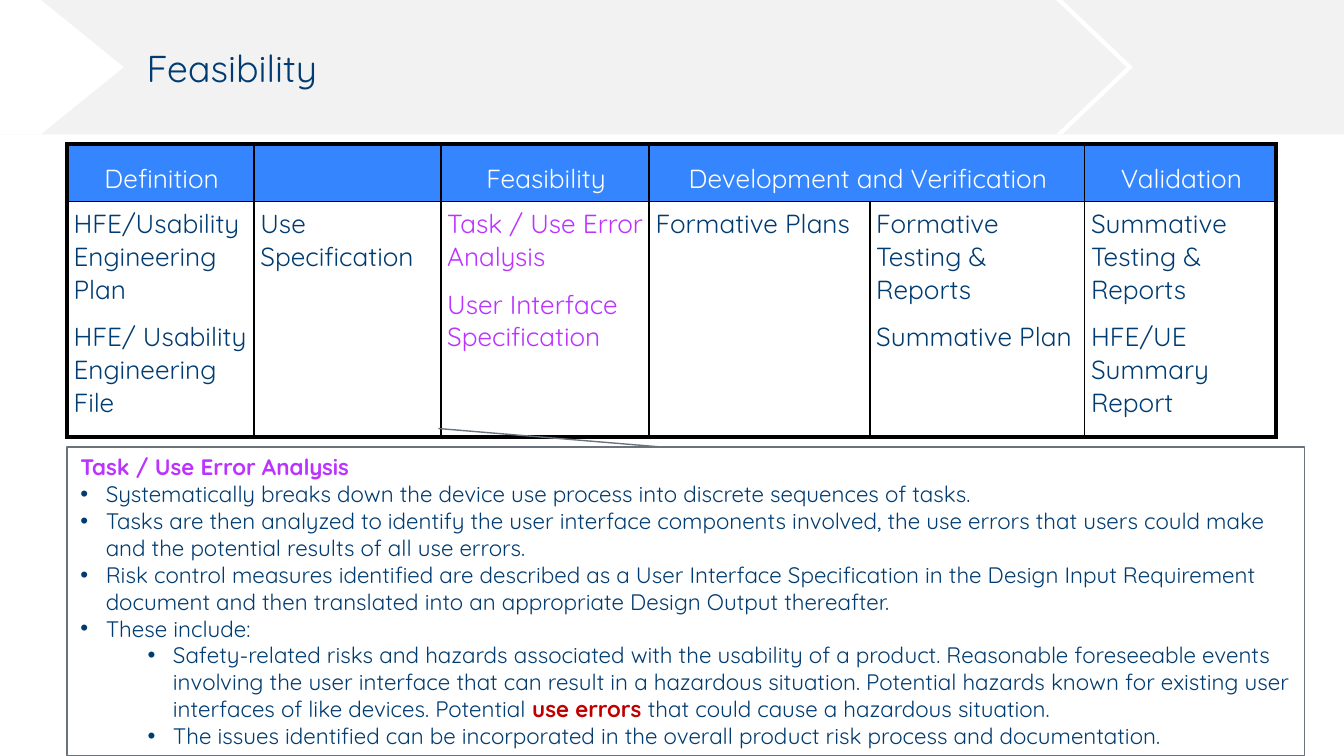
from lxml.etree import SubElement
from pptx import Presentation
from pptx.dml.color import RGBColor
from pptx.enum.shapes import MSO_SHAPE as Preset
from pptx.enum.text import MSO_ANCHOR as Anchor, PP_ALIGN as Align
from pptx.oxml import parse_xml
from pptx.oxml.ns import nsdecls, qn
from pptx.util import Cm, Pt

COLORS = {
    "navy": "003C71",
    "blue": "3485FE",
    "purple": "BB33FF",
    "red": "C00000",
    "band": "F2F2F2",
    "white": "FFFFFF",
    "black": "000000",
    "gray": "6A737B",
}
FONT = "Quicksand"

HEADERS = ["Definition", "", "Feasibility", "Development and Verification", "", "Validation"]
DELIVERABLES = [
    ["HFE/Usability Engineering Plan", "HFE/ Usability Engineering File"],
    ["Use Specification"],
    ["Task / Use Error Analysis", "User Interface Specification"],
    ["Formative Plans"],
    ["Formative Testing & Reports", "Summative Plan"],
    ["Summative Testing & Reports", "HFE/UE Summary Report"],
]
COLUMN_WIDTHS = [3.53, 3.53, 3.94, 4.17, 4.06, 3.62]
ROW_HEIGHTS = [0.76, 4.45]
FEASIBILITY_COLUMN = 2

BULLETS = [
    (0.48, ["Systematically breaks down the device use process into discrete sequences of tasks."]),
    (0.48, ["Tasks are then analyzed to identify the user interface components involved, the use "
            "errors that users could make and the potential results of all use errors."]),
    (0.48, ["Risk control measures identified are described as a User Interface Specification in "
            "the Design Input Requirement document and then translated into an appropriate "
            "Design Output thereafter."]),
    (0.48, ["These include:"]),
    (1.75, ["Safety-related risks and hazards associated with the usability of a product. "
            "Reasonable foreseeable events involving the user interface that can result in a "
            "hazardous situation. Potential hazards known for existing user interfaces of like "
            "devices. Potential ",
            "use errors ",
            "that could cause a hazardous situation."]),
    (1.75, ["The issues identified can be incorporated in the overall product risk process and "
            "documentation."]),
]


def rgb(name):
    return RGBColor.from_string(COLORS[name])


def add_text(para, text, size=14, color="navy", bold=False):
    span = para.add_run()
    span.text = text
    span.font.name = FONT
    span.font.size = Pt(size)
    span.font.bold = bold
    span.font.color.rgb = rgb(color)


class SlideBuilder:
    def __init__(self, page):
        self.page = page

    def shape(self, preset, place, fill, adjustments=(), line=None):
        shape = self.page.shapes.add_shape(preset, *map(Cm, place))
        shape.shadow.inherit = False
        shape.fill.solid()
        shape.fill.fore_color.rgb = rgb(fill)
        if line:
            shape.line.color.rgb = rgb(line)
            shape.line.width = Pt(0.75)
        else:
            shape.line.fill.background()
        for index, value in enumerate(adjustments):
            shape.adjustments[index] = value
        return shape

    def title(self, place, text):
        box = self.page.shapes.add_textbox(*map(Cm, place))
        frame = box.text_frame
        frame.word_wrap = True
        frame.vertical_anchor = Anchor.MIDDLE
        para = frame.paragraphs[0]
        para.line_spacing = 0.9
        add_text(para, text, size=20)

    def borders(self, cell, widths):
        properties = cell._tc.get_or_add_tcPr()
        for index, (side, width) in enumerate(zip("LRTB", widths)):
            properties.insert(index, parse_xml(
                f'<a:ln{side} {nsdecls("a")} w="{Pt(width)}"><a:solidFill>'
                f'<a:srgbClr val="{COLORS["black"]}"/></a:solidFill></a:ln{side}>'))

    def cell(self, cell, texts, fill, color, header):
        cell.fill.solid()
        cell.fill.fore_color.rgb = rgb(fill)
        cell.margin_left = cell.margin_top = cell.margin_bottom = Cm(0.12)
        cell.margin_right = Cm(0.08)
        for index, text in enumerate(filter(None, texts)):
            frame = cell.text_frame
            para = frame.add_paragraph() if index else frame.paragraphs[0]
            if header:
                para.alignment = Align.CENTER
                para.line_spacing = Pt(24)
            if index:
                para.space_before = Pt(8)
            add_text(para, text, color=color)

    def table(self, left, top):
        rows, columns = len(ROW_HEIGHTS), len(COLUMN_WIDTHS)
        table = self.page.shapes.add_table(
            rows, columns, Cm(left), Cm(top),
            Cm(sum(COLUMN_WIDTHS)), Cm(sum(ROW_HEIGHTS))).table
        table.first_row = table.horz_banding = False
        for row, height in zip(table.rows, ROW_HEIGHTS):
            row.height = Cm(height)
        for column, width in enumerate(COLUMN_WIDTHS):
            table.columns[column].width = Cm(width)
            body_color = "purple" if column == FEASIBILITY_COLUMN else "navy"
            self.cell(table.cell(0, column), [HEADERS[column]], "blue", "white", True)
            self.cell(table.cell(1, column), DELIVERABLES[column], "white", body_color, False)
            for row in range(rows):
                outer = (column == 0, column == columns - 1, row == 0, row == rows - 1)
                self.borders(table.cell(row, column), [2.25 if edge else 1 for edge in outer])
        table.cell(0, 3).merge(table.cell(0, 4))

    def callout(self, place, heading, bullets):
        box = self.shape(Preset.LINE_CALLOUT_1, place, "white",
                         (0, 0.48, -0.06, 0.3), line="gray")
        frame = box.text_frame
        frame.word_wrap = True
        frame.vertical_anchor = Anchor.MIDDLE
        para = frame.paragraphs[0]
        para.alignment = Align.LEFT
        add_text(para, heading, size=12, color="purple", bold=True)
        for margin, texts in bullets:
            para = frame.add_paragraph()
            para.alignment = Align.LEFT
            para.level = int(margin > 1)
            properties = para._p.get_or_add_pPr()
            properties.set("marL", str(Cm(margin)))
            properties.set("indent", str(-Cm(0.48)))
            SubElement(properties, qn("a:buFont"), typeface="Arial")
            SubElement(properties, qn("a:buChar"), char="•")
            for index, text in enumerate(texts):
                strong = index == 1
                add_text(para, text, size=12, color="red" if strong else "navy", bold=strong)


def main():
    deck = Presentation()
    deck.slide_width, deck.slide_height = Cm(25.4), Cm(14.29)
    builder = SlideBuilder(deck.slides.add_slide(deck.slide_layouts[6]))
    builder.shape(Preset.RECTANGLE, (0, 0, 25.4, 2.54), "band")
    builder.shape(Preset.CHEVRON, (19.96, 0, 1.45, 2.54), "white", [0.92])
    builder.shape(Preset.PENTAGON, (0, 0, 2.34, 2.54), "white", [0.67])
    builder.title((2.52, 0.64, 21.62, 1.4), "Feasibility")
    builder.table(1.27, 2.72)
    builder.callout((1.27, 8.45, 23.39, 5.83), "Task / Use Error Analysis", BULLETS)
    deck.save("out.pptx")


if __name__ == "__main__":
    main()
